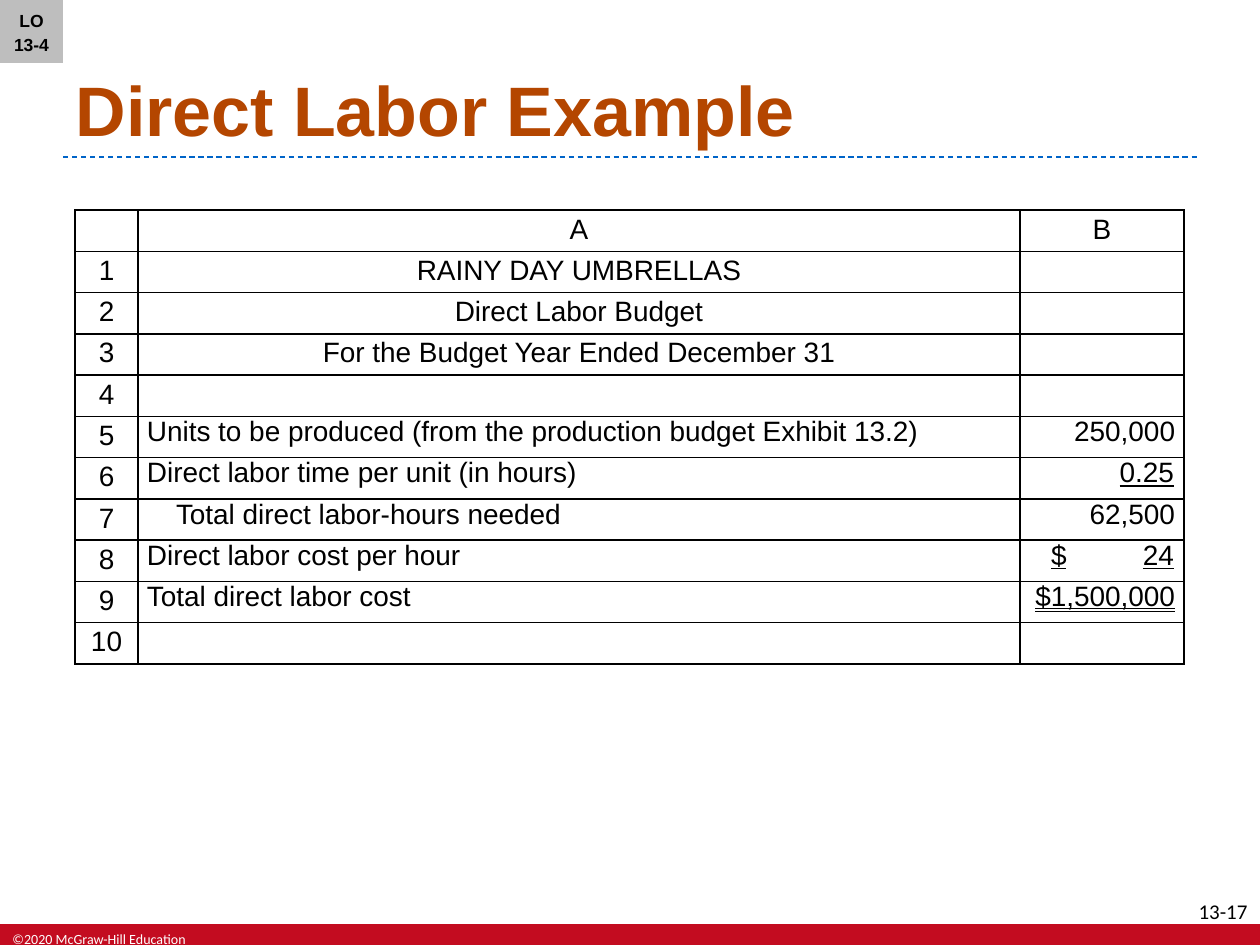
"""Build the direct labor budget slide."""
from dataclasses import dataclass
from lxml import etree
from pptx import Presentation
from pptx import util as u
from pptx.dml.color import RGBColor as Rgb
from pptx.enum import dml, shapes, text
from pptx.oxml.ns import qn


@dataclass(frozen=True)
class Theme:
    sans: str = "Arial"
    foot: str = "Calibri"
    ink: str = "000000"
    white: str = "FFFFFF"
    rust: str = "B44600"
    red: str = "C30C20"
    gray: str = "BEBEBE"
    blue: str = "0064C8"
    head: int = 40
    body: int = 16
    page: int = 12
    badge: int = 10
    small: int = 8


T = Theme()
PX = u.Inches(1) / 126
LEFT, MID, RIGHT = text.PP_ALIGN.LEFT, text.PP_ALIGN.CENTER, text.PP_ALIGN.RIGHT
TOP, CORE, LOW = (text.MSO_ANCHOR.TOP, text.MSO_ANCHOR.MIDDLE,
                  text.MSO_ANCHOR.BOTTOM)
ONE, TWO = (text.MSO_UNDERLINE.SINGLE_LINE, text.MSO_UNDERLINE.DOUBLE_LINE)

TITLE = "Direct Labor Example"
BADGE = "LO 13-4"
NOTICE = "©2020 McGraw-Hill Education"
PAGE = "13-17"
HEADS = ("RAINY DAY UMBRELLAS", "Direct Labor Budget",
         "For the Budget Year Ended December 31", "")
LINES = (
    ("Units to be produced (from the production budget Exhibit 13.2)",
     "250,000", None),
    ("Direct labor time per unit (in hours)", "\t0.25", ONE),
    ("Total direct labor-hours needed", "62,500", None),
    ("Direct labor cost per hour", "\t$\t24", ONE),
    ("Total direct labor cost", "$1,500,000", TWO),
)
INDENT = "Total direct labor-hours needed"
COLS = (63, 882, 164)
ROWS, TALL = 11, 454
PAD = (13, 4, 13, 4)
SLIM = (9, 0, 9, 0)
DEEP = (38, 0, 9, 0)
RULED = (15, 0, 9, 0)
STOPS = {"\t0.25": ((139, "r"),), "\t$\t24": ((16, "l"), (139, "r"))}


def px(n):
    return u.Emu(round(n * PX))


def assign(item, vals):
    for key, val in vals.items():
        setattr(item, key, val)


def inset(item, pads):
    sides = ("margin_left", "margin_top", "margin_right", "margin_bottom")
    assign(item, dict(zip(sides, map(px, pads))))


def write(frame, words, size, color=T.ink, face=T.sans, align=LEFT,
          stops=(), **style):
    para = frame.paragraphs[0]
    para.alignment = align
    if stops:
        tabs = etree.SubElement(para._p.get_or_add_pPr(), qn("a:tabLst"))
        for spot, kind in stops:
            etree.SubElement(tabs, qn("a:tab"), pos=str(px(spot)), algn=kind)
    run = para.add_run()
    run.text = words
    assign(run.font, dict(name=face, size=u.Pt(size), **style))
    run.font.color.rgb = Rgb.from_string(color)
    return para


def setup(frame, anchor):
    assign(frame, dict(word_wrap=True, auto_size=text.MSO_AUTO_SIZE.NONE,
                       vertical_anchor=anchor))
    return frame


def block(slide, box, color):
    form = slide.shapes.add_shape(shapes.MSO_SHAPE.RECTANGLE, *map(px, box))
    form.shadow.inherit = False
    form.fill.solid()
    form.fill.fore_color.rgb = Rgb.from_string(color)
    form.line.fill.background()
    return form


def label(slide, box, words, size, **style):
    form = slide.shapes.add_textbox(*map(px, box))
    write(setup(form.text_frame, TOP), words, size, face=T.foot, **style)


def rule(slide):
    line = slide.shapes.add_connector(
        shapes.MSO_CONNECTOR.STRAIGHT, *map(px, (63, 157, 1197, 157)))
    assign(line.line, dict(width=u.Pt(0.75), dash_style=dml.MSO_LINE.DASH))
    line.line.color.rgb = Rgb.from_string(T.blue)
    etree.SubElement(line._element.spPr, qn("a:effectLst"))


def border(cell):
    props = cell._tc.get_or_add_tcPr()
    for spot, side in enumerate(("lnL", "lnR", "lnT", "lnB")):
        edge = etree.Element(qn("a:" + side), w=str(u.Pt(1)))
        fill = etree.SubElement(edge, qn("a:solidFill"))
        etree.SubElement(fill, qn("a:srgbClr"), val=T.ink)
        props.insert(spot, edge)


def grid():
    yield [("", {}), ("A", {}), ("B", {})]
    for num, head in enumerate(HEADS, 1):
        yield [(str(num), {}), (head, {}), ("", {})]
    for num, (name, value, under) in enumerate(LINES, len(HEADS) + 1):
        stops = STOPS.get(value, ())
        yield [(str(num), {}),
               (name, dict(pads=DEEP if name == INDENT else SLIM, align=LEFT)),
               (value, dict(pads=RULED if stops else SLIM, stops=stops,
                            align=LEFT if stops else RIGHT, underline=under))]
    yield [(str(ROWS - 1), {}), ("", {}), ("", {})]


def fill(cell, words, pads=PAD, align=MID, **style):
    cell.fill.background()
    border(cell)
    inset(cell, pads if words else SLIM)
    if words:
        write(cell.text_frame, words, T.body, align=align, **style)


def budget(slide):
    box = map(px, (75, 210, sum(COLS), TALL))
    table = slide.shapes.add_table(ROWS, len(COLS), *box).table
    assign(table, dict(first_row=False, horz_banding=False))
    for col, width in zip(table.columns, COLS):
        col.width = px(width)
    for row, data in zip(table.rows, grid()):
        row.height = px(TALL / ROWS)
        for cell, (words, style) in zip(row.cells, data):
            fill(cell, words, **style)


def main():
    deck = Presentation()
    assign(deck, dict(slide_width=px(1260), slide_height=px(945)))
    slide = deck.slides.add_slide(deck.slide_layouts[5])
    block(slide, (0, 924, 1260, 21), T.red)
    label(slide, (0, 924, 202, 21), NOTICE, T.small, color=T.white)
    label(slide, (1172, 892, 88, 25), PAGE, T.page, align=RIGHT)
    rule(slide)
    title = slide.shapes.title
    for key, val in zip(("left", "top", "width", "height"), (63, 6, 1134, 151)):
        setattr(title, key, px(val))
    write(setup(title.text_frame, LOW), TITLE, T.head, T.rust, bold=True)
    budget(slide)
    badge = setup(block(slide, (0, 0, 63, 63), T.gray).text_frame, CORE)
    inset(badge, (13, 0, 13, 0))
    para = write(badge, BADGE, T.badge, align=MID, bold=True)
    para.line_spacing = 1.1
    deck.save("out.pptx")


if __name__ == "__main__":
    main()
